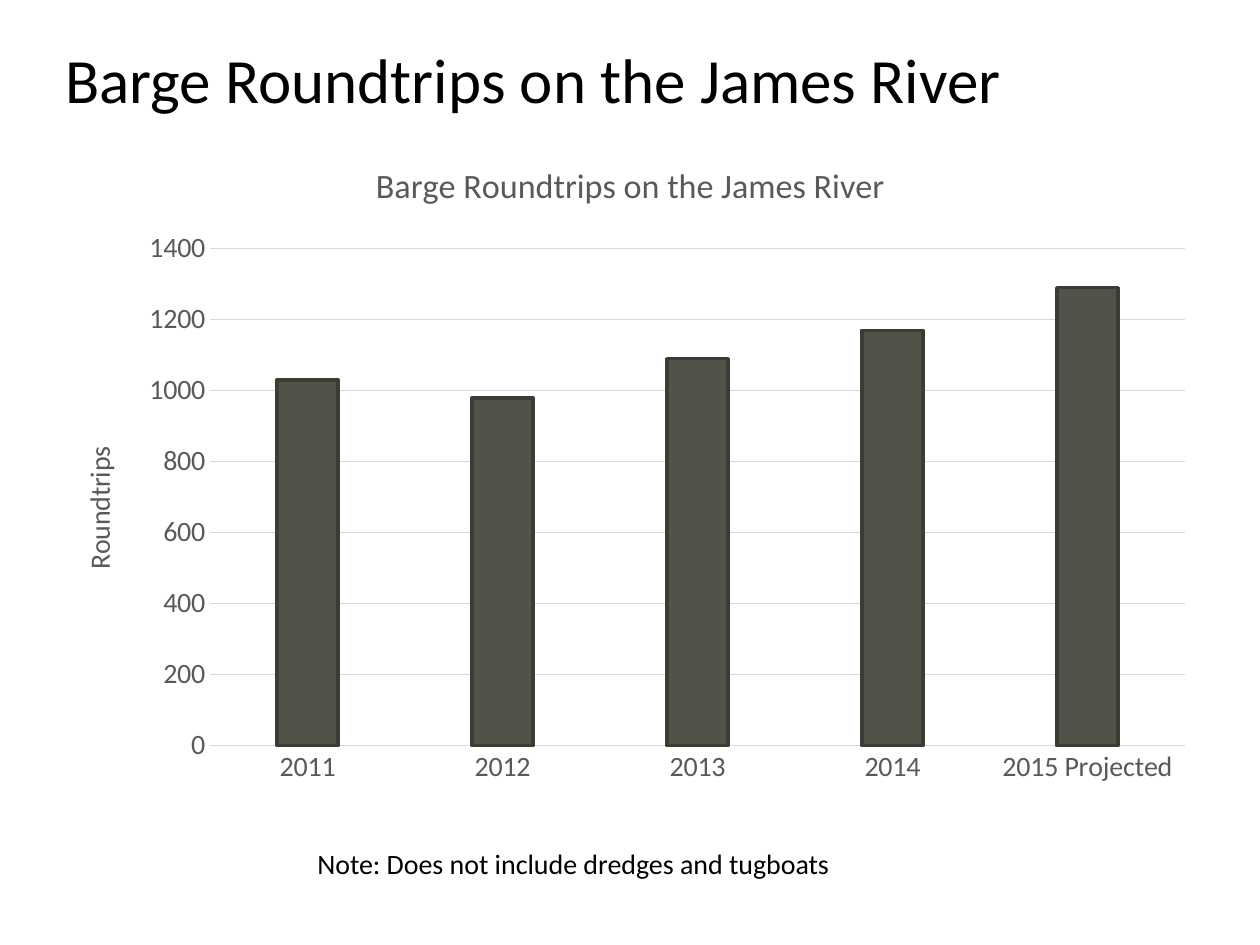
from pptx import Presentation
from pptx import util as u
from pptx.chart.data import CategoryChartData
from pptx.dml.color import RGBColor
from pptx.enum import chart as c
from pptx.enum import text as t

PX = u.Inches(1) / 126
FONT = "Calibri"
BLACK, GREY, RULE = "000000", "595959", "D9D9D9"
BAR, BAR_EDGE = "505348", "3B3D35"

TITLE = "Barge Roundtrips on the James River"
NOTE = "Note: Does not include dredges and tugboats"
AXIS_TITLE = "Roundtrips"
ROUNDTRIPS = {"2011": 1030, "2012": 980, "2013": 1090, "2014": 1170, "2015 Projected": 1290}

# text, (left, top, width, height) in px, point size
TEXTS = [
    (TITLE, (53, 34, 1155, 73), 36),
    (NOTE, (305, 840, 882, 42), 16),
]
CHART_AREA = (53, 136, 1155, 662)


def px(lengths):
    return [round(length * PX) for length in lengths]


def color(value):
    return RGBColor.from_string(value)


def set_font(font, size, value):
    font.name, font.size, font.bold = FONT, u.Pt(size), False
    font.color.rgb = color(value)


def set_line(line, value, width):
    line.color.rgb = color(value)
    line.width = u.Pt(width)


def set_heading(frame, words, size):
    frame.text = words
    set_font(frame.paragraphs[0].font, size, GREY)


def add_text(slide, words, area, size):
    box = slide.shapes.add_textbox(*px(area))
    frame = box.text_frame
    frame.word_wrap = True
    frame.vertical_anchor = t.MSO_ANCHOR.TOP
    para = frame.paragraphs[0]
    para.text = words
    set_font(para.font, size, BLACK)


def add_bar_chart(slide):
    data = CategoryChartData()
    data.categories = list(ROUNDTRIPS)
    data.add_series("Series 1", list(ROUNDTRIPS.values()))
    chart = slide.shapes.add_chart(
        c.XL_CHART_TYPE.COLUMN_CLUSTERED, *px(CHART_AREA), data).chart
    set_font(chart.font, 16, BLACK)
    chart.has_legend = False
    chart.has_title = True
    set_heading(chart.chart_title.text_frame, TITLE, 19.5)
    chart.chart_title.include_in_layout = False

    plot = chart.plots[0]
    plot.gap_width, plot.overlap = 219, -27
    plot.vary_by_categories = False
    bars = plot.series[0].format
    bars.fill.solid()
    bars.fill.fore_color.rgb = color(BAR)
    set_line(bars.line, BAR_EDGE, 2)

    for axis in (chart.category_axis, chart.value_axis):
        axis.major_tick_mark = axis.minor_tick_mark = c.XL_TICK_MARK.NONE
        set_font(axis.tick_labels.font, 16, GREY)
    set_line(chart.category_axis.format.line, RULE, 0.75)

    values = chart.value_axis
    values.minimum_scale, values.maximum_scale, values.major_unit = 0, 1400, 200
    values.format.line.fill.background()
    values.has_major_gridlines = True
    set_line(values.major_gridlines.format.line, RULE, 0.75)
    values.has_title = True
    set_heading(values.axis_title.text_frame, AXIS_TITLE, 16)


def main():
    deck = Presentation()
    deck.slide_width, deck.slide_height = u.Inches(10), u.Inches(7.5)
    slide = deck.slides.add_slide(deck.slide_layouts[6])
    add_bar_chart(slide)
    for words, area, size in TEXTS:
        add_text(slide, words, area, size)
    deck.save("out.pptx")


if __name__ == "__main__":
    main()
